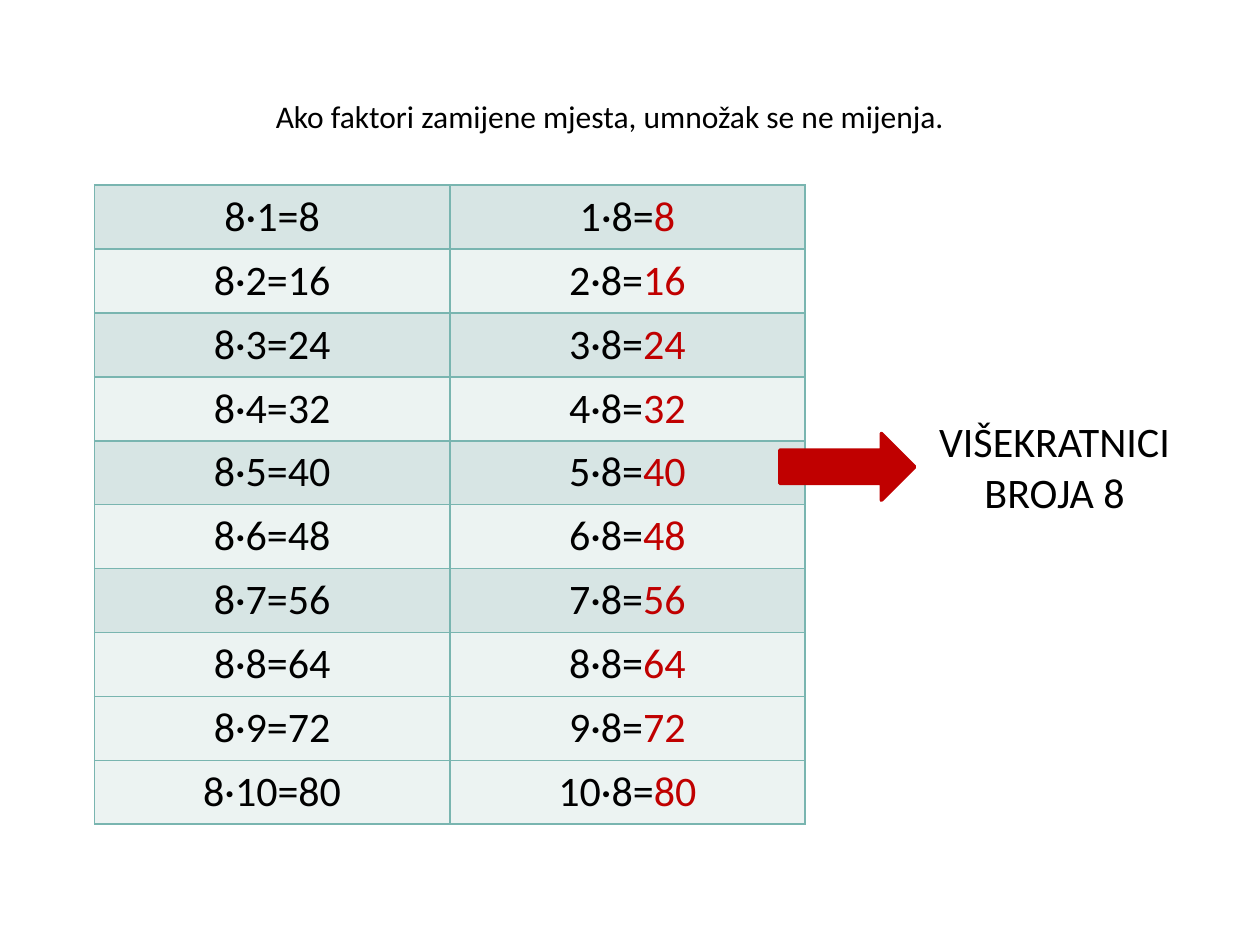
from lxml import etree
from pptx import Presentation
from pptx.dml.color import RGBColor
from pptx.enum.shapes import MSO_SHAPE
from pptx.enum.text import PP_ALIGN
from pptx.oxml.ns import qn
from pptx.util import Inches, Pt

BLACK = RGBColor(0x00, 0x00, 0x00)
RED = RGBColor(0xC0, 0x00, 0x00)
DARK_BAND = RGBColor(0xD7, 0xE5, 0xE4)
LIGHT_BAND = RGBColor(0xEC, 0xF3, 0xF2)
BORDER = RGBColor(0x79, 0xB5, 0xB0)
FONT = "Calibri"

# Content
RULE = "Ako faktori zamijene mjesta, umnožak se ne mijenja."
MULTIPLES_LABEL = ["VIŠEKRATNICI", "BROJA 8"]
BASE = 8
FACTORS = range(1, 11)
DARK_FACTORS = (1, 3, 5, 7)

# Each row: two cells, each a list of (text, colour) runs
EQUATIONS = [
    ([(f"{BASE}·{n}={BASE * n}", BLACK)],
     [(f"{n}·{BASE}=", BLACK), (f"{BASE * n}", RED)])
    for n in FACTORS
]


def add_runs(paragraph, runs, size):
    for text, color in runs:
        run = paragraph.add_run()
        run.text = text
        run.font.name = FONT
        run.font.size = Pt(size)
        run.font.color.rgb = color


def add_label(slide, box, lines, size, align):
    frame = slide.shapes.add_textbox(*map(Inches, box)).text_frame
    frame.word_wrap = True
    for i, line in enumerate(lines):
        paragraph = frame.add_paragraph() if i else frame.paragraphs[0]
        paragraph.alignment = align
        add_runs(paragraph, [(line, BLACK)], size)


def set_borders(cell):
    properties = cell._tc.get_or_add_tcPr()
    for position, side in enumerate(("a:lnL", "a:lnR", "a:lnT", "a:lnB")):
        line = etree.Element(qn(side), w=str(Pt(1)))
        fill = etree.SubElement(line, qn("a:solidFill"))
        etree.SubElement(fill, qn("a:srgbClr"), val=str(BORDER))
        properties.insert(position, line)


prs = Presentation()
prs.slide_width, prs.slide_height = Inches(10), Inches(7.5)
slide = prs.slides.add_slide(prs.slide_layouts[6])

# Multiplication table
times_table = slide.shapes.add_table(
    len(EQUATIONS), 2, Inches(0.75), Inches(1.47), Inches(5.64), Inches(5)).table
for r, (n, equations) in enumerate(zip(FACTORS, EQUATIONS)):
    for c, runs in enumerate(equations):
        cell = times_table.cell(r, c)
        cell.fill.solid()
        cell.fill.fore_color.rgb = DARK_BAND if n in DARK_FACTORS else LIGHT_BAND
        set_borders(cell)
        paragraph = cell.text_frame.paragraphs[0]
        paragraph.alignment = PP_ALIGN.CENTER
        add_runs(paragraph, runs, 24)

# Rule above the table
add_label(slide, (2.09, 0.72, 5.91, 0.4), [RULE], 18, PP_ALIGN.LEFT)

# Arrow from the products to their name
arrow = slide.shapes.add_shape(
    MSO_SHAPE.RIGHT_ARROW, Inches(6.19), Inches(3.44), Inches(1.07), Inches(0.53))
arrow.shadow.inherit = False
arrow.fill.solid()
arrow.fill.fore_color.rgb = RED
arrow.line.color.rgb = RED
arrow.line.width = Pt(2)

add_label(slide, (7.26, 3.25, 2.22, 0.91), MULTIPLES_LABEL, 24, PP_ALIGN.CENTER)

prs.save("out.pptx")
